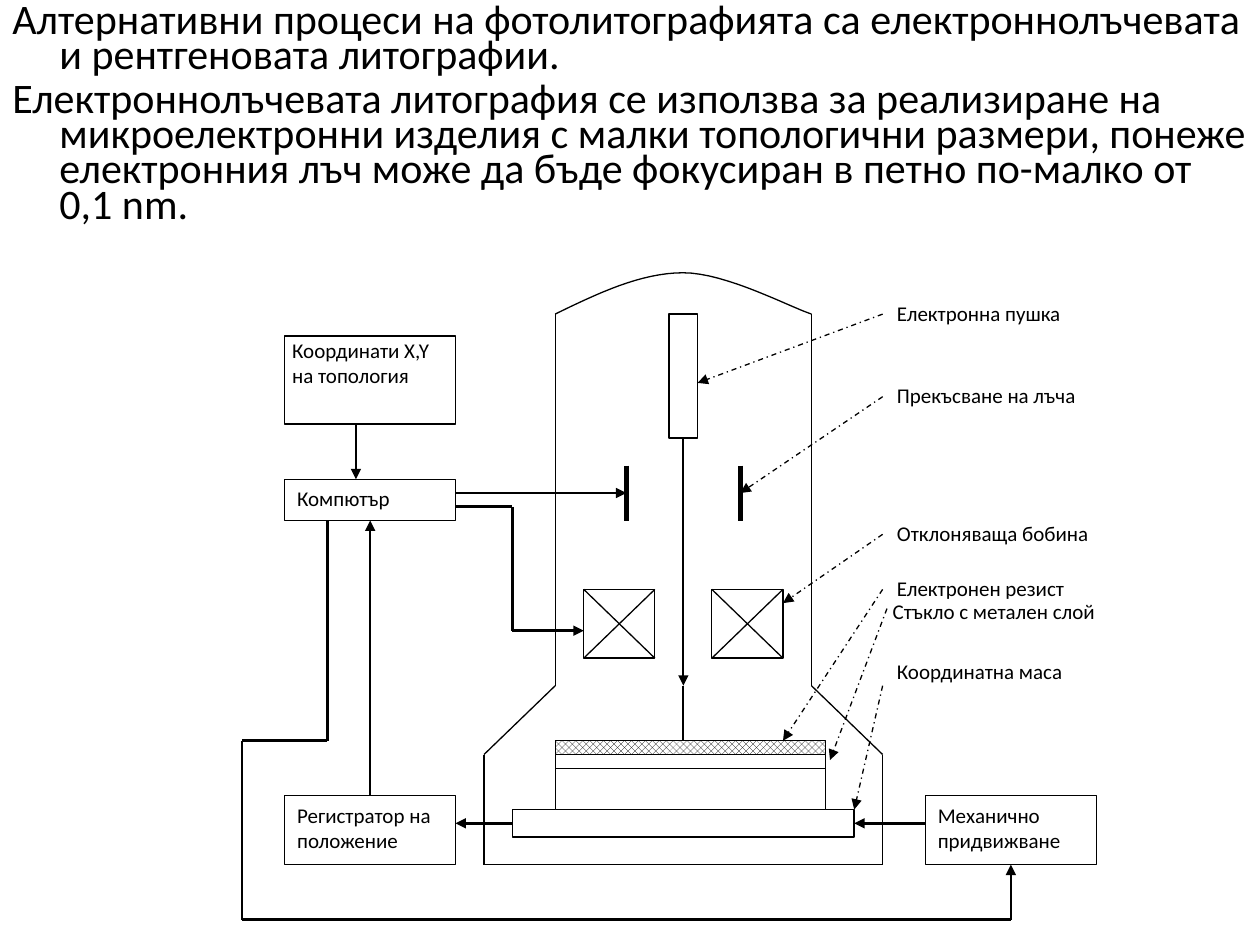
from itertools import pairwise
from lxml.etree import SubElement
from pptx import Presentation
from pptx.dml.color import RGBColor
from pptx.enum.dml import MSO_LINE, MSO_PATTERN
from pptx.enum.shapes import MSO_CONNECTOR, MSO_SHAPE
from pptx.enum.text import MSO_ANCHOR, PP_ALIGN
from pptx.oxml.ns import qn
from pptx.util import Cm, Pt

COLORS = {"ink": "000000", "paper": "FFFFFF"}
FONT = "Calibri"
THIN, BEAM, FLOW, PLATE = 0.75, 1.25, 1.5, 3

INTRO = [
    "Алтернативни процеси на фотолитографията са електроннолъчевата и рентгеновата литографии.",
    "Електроннолъчевата литография се използва за реализиране на микроелектронни изделия "
    "с малки топологични размери, понеже електронния лъч може да бъде фокусиран в петно "
    "по-малко от 0,1 nm.",
]

# The diagram sits on a grid; all places below are (column, row)
COL, ROW, TOP = 0.287, 13.04 / 47, 5.5

# Boxes: left, top, right, bottom, text, insets in cm
BLOCKS = [
    (20, 4.6, 32, 11, "Координати X,Y на топология", (0.15, 0.03)),
    (20, 15, 32, 18, "Компютър", (0.25, 0.13)),
    (20, 38, 32, 43, "Регистратор на положение", (0.25, 0.13)),
    (65, 38, 77, 43, "Механично придвижване", (0.25, 0.13)),
]
STAGE = (36, 39, 60, 41)
GLASS = (39, 35, 58, 39)
RESIST = (39, 34, 58, 35)
GUN = (47, 3, 49, 12)
COILS = [(41, 23, 46, 28), (50, 23, 55, 28)]

# Dome as two cubic curves; the chamber outline below it
DOME = [
    [(39, 3), (42, 1.5), (45, 0), (48, 0)],
    [(48, 0), (51, 0), (55.5, 2.5), (57, 3)],
]
CHAMBER = [(39, 3), (39, 30), (34, 35), (34, 43), (62, 43), (62, 35), (57, 30), (57, 3)]

# Labels: left, top, width, text, leader start, leader end
LABELS = [
    (63, 2, 14, "Електронна пушка", (62, 3), (49, 8)),
    (63, 8, 14, "Прекъсване на лъча", (62, 9), (52, 16)),
    (63, 18, 15, "Отклоняваща бобина", (62, 19), (55, 24)),
    (63, 22, 14, "Електронен резист", (62, 23), (55, 34)),
    (62.7, 23.7, 16.4, "Стъкло с метален слой", (62.3, 24.4), (58.3, 35.4)),
    (63, 28, 14, "Координатна маса", (62, 30), (60, 39)),
]

# Signal and motion routes, each ending in an arrowhead
FLOWS = [
    [(65, 40), (60, 40)],
    [(36, 40), (32, 40)],
    [(26, 38), (26, 18)],
    [(25, 11), (25, 15)],
    [(23, 18), (23, 34), (17, 34), (17, 47), (71, 47), (71, 43)],
    [(32, 16), (44, 16)],
    [(32, 17), (36, 17), (36, 26), (41, 26)],
]

prs = Presentation()
prs.slide_width, prs.slide_height = Cm(25.4), Cm(19.05)
s = prs.slides.add_slide(prs.slide_layouts[6])


def rgb(name):
    return RGBColor.from_string(COLORS[name])


def at(col, row):
    return Cm(col * COL), Cm(TOP + row * ROW)


def ink_line(line, width):
    line.color.rgb = rgb("ink")
    line.width = Pt(width)


def write(p, text, size):
    p.alignment = PP_ALIGN.LEFT
    r = p.add_run()
    r.text = text
    r.font.name, r.font.size = FONT, Pt(size)
    r.font.color.rgb = rgb("ink")


def box(left, top, right, bottom, text="", insets=(0, 0), outline=True):
    x, y = at(left, top)
    x2, y2 = at(right, bottom)
    sp = s.shapes.add_shape(MSO_SHAPE.RECTANGLE, x, y, x2 - x, y2 - y)
    sp.shadow.inherit = False
    sp.fill.solid()
    sp.fill.fore_color.rgb = rgb("paper")
    if outline:
        ink_line(sp.line, THIN)
    else:
        sp.line.fill.background()
    if text:
        tf = sp.text_frame
        tf.word_wrap = True
        tf.vertical_anchor = MSO_ANCHOR.TOP
        tf.margin_left = tf.margin_right = Cm(insets[0])
        tf.margin_top = tf.margin_bottom = Cm(insets[1])
        write(tf.paragraphs[0], text, 12)
    return sp


def route(points, width=THIN, arrow=False, dash=None):
    for start, end in pairwise(points):
        c = s.shapes.add_connector(MSO_CONNECTOR.STRAIGHT, *at(*start), *at(*end))
        ink_line(c.line, width)
        if dash:
            c.line.dash_style = dash
        spPr = c._element.spPr
        if arrow and end == points[-1]:
            SubElement(spPr.find(qn("a:ln")), qn("a:tailEnd"), type="triangle")
        SubElement(spPr, qn("a:effectLst"))


def cubic(curve, t):
    weights = ((1 - t) ** 3, 3 * t * (1 - t) ** 2, 3 * t**2 * (1 - t), t**3)
    return at(*(sum(w * v for w, v in zip(weights, axis)) for axis in zip(*curve)))


# Introductory text
tf = s.shapes.add_textbox(0, 0, prs.slide_width, Cm(5.28)).text_frame
tf.word_wrap = True
for i, text in enumerate(INTRO):
    p = tf.paragraphs[0] if i == 0 else tf.add_paragraph()
    p.line_spacing, p.space_before = 0.7, Pt(4.8)
    pPr = p._p.get_or_add_pPr()
    pPr.set("marL", str(Cm(0.95)))
    pPr.set("indent", str(-Cm(0.95)))
    write(p, text, 24)

# Control blocks
for block in BLOCKS:
    box(*block)

# Vacuum chamber
dome_points = [cubic(curve, i / 16) for curve in DOME for i in range(17)]
builder = s.shapes.build_freeform(*dome_points[0])
builder.add_line_segments(dome_points[1:], close=False)
dome = builder.convert_to_shape()
dome.shadow.inherit = False
dome.fill.background()
ink_line(dome.line, THIN)
route(CHAMBER)

# Stage, glass with metal layer, resist
box(*STAGE)
box(*GLASS)
route([(39, 36), (58, 36)])
fill = box(*RESIST).fill
fill.patterned()
fill.pattern = MSO_PATTERN.OUTLINED_DIAMOND
fill.fore_color.rgb, fill.back_color.rgb = rgb("ink"), rgb("paper")

# Deflection coils
for left, top, right, bottom in COILS:
    box(left, top, right, bottom)
    route([(left, top), (right, bottom)])
    route([(right, top), (left, bottom)])

# Electron gun, beam and blanking plates
box(*GUN)
route([(48, 30), (48, 34)], BEAM)
route([(48, 12), (48, 30)], BEAM, arrow=True)
for col in (44, 52):
    route([(col, 14), (col, 18)], PLATE)

# Labels, then their leaders on top
for left, top, width, text, _, _ in LABELS:
    box(left, top, left + width, top + 3, text, outline=False)
for *_, start, end in LABELS:
    route([start, end], arrow=True, dash=MSO_LINE.DASH_DOT)

# Flows
for points in FLOWS:
    route(points, FLOW, arrow=True)

prs.save("out.pptx")
